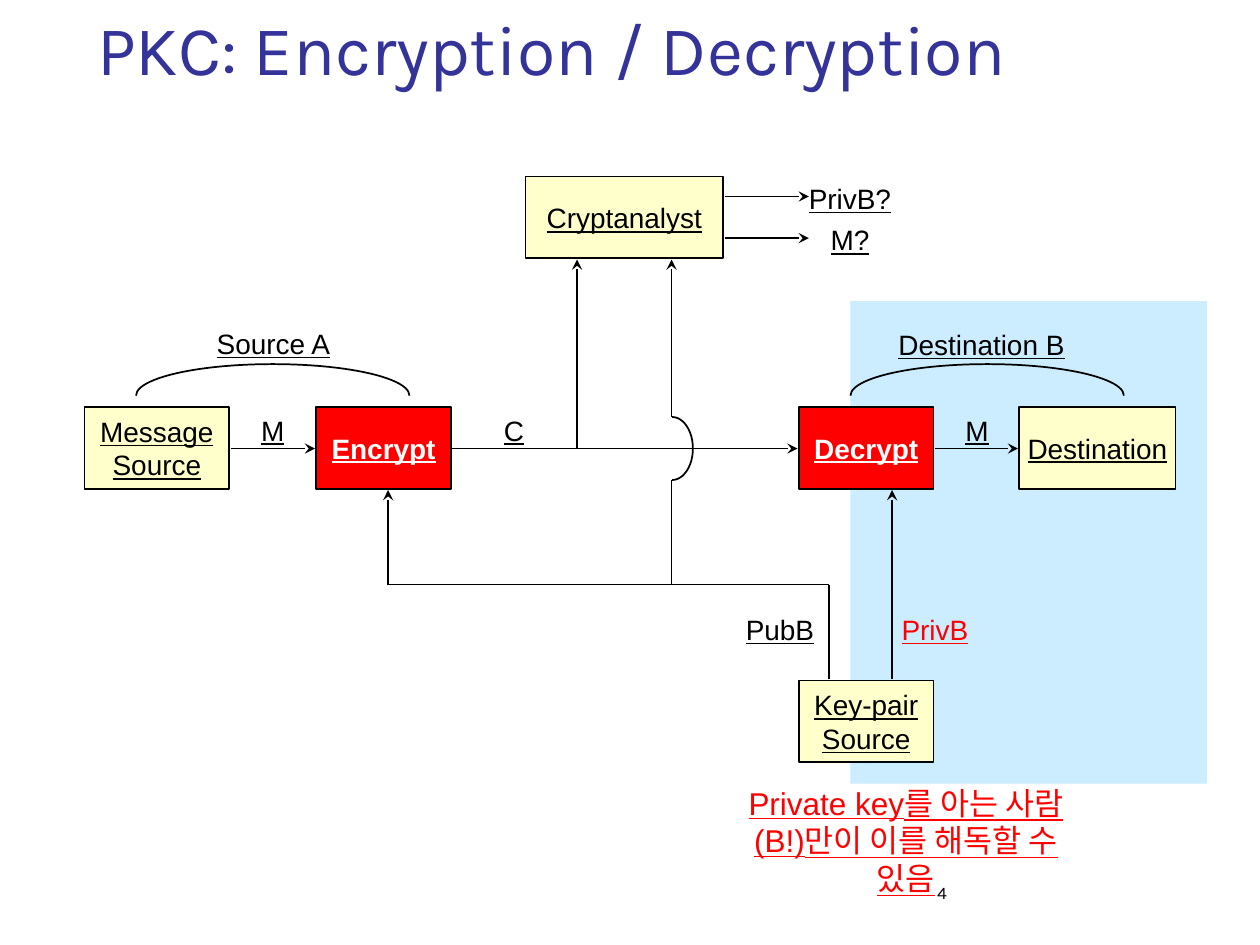
from pptx import Presentation
from pptx.dml.color import RGBColor
from pptx.enum.shapes import MSO_CONNECTOR, MSO_SHAPE
from pptx.enum.text import MSO_ANCHOR, MSO_AUTO_SIZE, PP_ALIGN
from pptx.oxml.ns import qn
from pptx.util import Inches, Pt
from lxml import etree

RECT, ARC = MSO_SHAPE.RECTANGLE, MSO_SHAPE.ARC
STRAIGHT = MSO_CONNECTOR.STRAIGHT
TOP, MIDDLE, BOTTOM = MSO_ANCHOR.TOP, MSO_ANCHOR.MIDDLE, MSO_ANCHOR.BOTTOM
LEFT, CENTER = PP_ALIGN.LEFT, PP_ALIGN.CENTER
NO_FIT = MSO_AUTO_SIZE.NONE

BLACK = RGBColor(0x00, 0x00, 0x00)
WHITE = RGBColor(0xFF, 0xFF, 0xFF)
RED = RGBColor(0xFF, 0x00, 0x00)
CREAM = RGBColor(0xFF, 0xFF, 0xCC)
SKY = RGBColor(0xCC, 0xEC, 0xFF)
NAVY = RGBColor(0x33, 0x33, 0x99)

ROW, HIGH = 3.23, 0.65
FLOW, BUS = 3.56, 4.64


def place(left, top, width, height):
    return [Inches(v) for v in (left, top, width, height)]


def write(shape, text, size=16, font="Arial", color=BLACK, bold=False,
          under=True, align=CENTER, anchor=TOP, wrap=False):
    frame = shape.text_frame
    frame.text = text
    frame.auto_size = NO_FIT
    frame.word_wrap = wrap
    frame.vertical_anchor = anchor
    for para in frame.paragraphs:
        para.alignment = align
        for run in para.runs:
            run.font.size = Pt(size)
            run.font.name = font
            run.font.bold = bold
            run.font.underline = under
            run.font.color.rgb = color


def label(slide, text, left, top, width, height=0.37, **style):
    box = slide.shapes.add_textbox(*place(left, top, width, height))
    write(box, text, **style)


def panel(slide, left, top, width, height, fill):
    shape = slide.shapes.add_shape(RECT, *place(left, top, width, height))
    shape.shadow.inherit = False
    shape.fill.solid()
    shape.fill.fore_color.rgb = fill
    shape.line.fill.background()
    return shape


def node(slide, text, left, top, width, fill=CREAM, **style):
    shape = panel(slide, left, top, width, HIGH, fill)
    shape.line.color.rgb = BLACK
    shape.line.width = Pt(1)
    write(shape, text, anchor=MIDDLE, **style)


def wire(slide, x1, y1, x2, y2, arrow=True):
    line = slide.shapes.add_connector(STRAIGHT, *place(x1, y1, x2, y2))
    line.line.color.rgb = BLACK
    line.line.width = Pt(1)
    if arrow:
        etree.SubElement(line.line._get_or_add_ln(), qn("a:tailEnd"), type="stealth")
    etree.SubElement(line._element.spPr, qn("a:effectLst"))


def arc(slide, left, top, width, start, end):
    shape = slide.shapes.add_shape(ARC, *place(left, top, width, 0.5))
    shape.shadow.inherit = False
    shape.adjustments[0] = start * 0.6
    shape.adjustments[1] = end * 0.6
    shape.fill.background()
    shape.line.color.rgb = BLACK
    shape.line.width = Pt(1)


def main():
    deck = Presentation()
    deck.slide_width, deck.slide_height = Inches(10), Inches(7.5)
    slide = deck.slides.add_slide(deck.slide_layouts[5])

    title = slide.shapes.title
    title.left, title.top, title.width, title.height = place(0.67, 0, 9.1, 0.76)
    write(title, "PKC: Encryption / Decryption", size=40, font="Karla",
          color=NAVY, under=False, align=LEFT, anchor=BOTTOM, wrap=True)

    panel(slide, 6.75, 2.39, 2.83, 3.83, SKY)

    node(slide, "Message\nSource", 0.67, ROW, 1.15)
    node(slide, "Destination", 8.09, ROW, 1.24)
    node(slide, "Key-pair\nSource", 6.34, 5.4, 1.07)
    node(slide, "Cryptanalyst", 4.17, 1.4, 1.57)
    for text, left in (("Encrypt", 2.51), ("Decrypt", 6.34)):
        node(slide, text, left, ROW, 1.07, fill=RED, color=WHITE, bold=True)

    for start, end in ((1.83, 2.5), (3.58, 6.33), (7.42, 8.08)):
        wire(slide, start, FLOW, end, FLOW)
    for x, start, end in ((3.08, BUS, 3.89), (7.08, 5.39, 3.89),
                          (4.58, FLOW, 2.06), (5.33, 3.31, 2.06)):
        wire(slide, x, start, x, end)
    for y in (1.56, 1.89):
        wire(slide, 5.75, y, 6.42, y)
    wire(slide, 3.08, BUS, 6.58, BUS, arrow=False)
    wire(slide, 6.58, 5.39, 6.58, BUS, arrow=False)
    wire(slide, 5.33, BUS, 5.33, 3.81, arrow=False)

    arc(slide, 5.17, 3.31, 0.33, 270, 90)
    for left in (1.08, 6.75):
        arc(slide, left, 2.89, 2.17, 180, 0)

    for text, left, top, width in (
        ("M", 1.97, ROW, 0.39),
        ("M", 7.56, ROW, 0.39),
        ("C", 3.9, ROW, 0.36),
        ("PubB", 5.67, 4.81, 1.04),
        ("Source A", 1.61, 2.54, 1.12),
        ("Destination B", 7.03, 2.55, 1.52),
        ("PrivB?", 6.32, 1.39, 0.85),
        ("M?", 6.49, 1.72, 0.51),
    ):
        label(slide, text, left, top, width)
    label(slide, "PrivB", 7.03, 4.81, 0.78, color=RED)
    label(slide, "Private key를 아는 사람(B!)만이 이를 해독할 수 있음",
          5.67, 6.17, 3.04, 1, size=18, color=RED, wrap=True)
    label(slide, "4", 7.34, 6.95, 2.17, 0.4, size=10, font="Karla",
          under=False, align=LEFT, wrap=True)

    deck.save("out.pptx")


if __name__ == "__main__":
    main()
